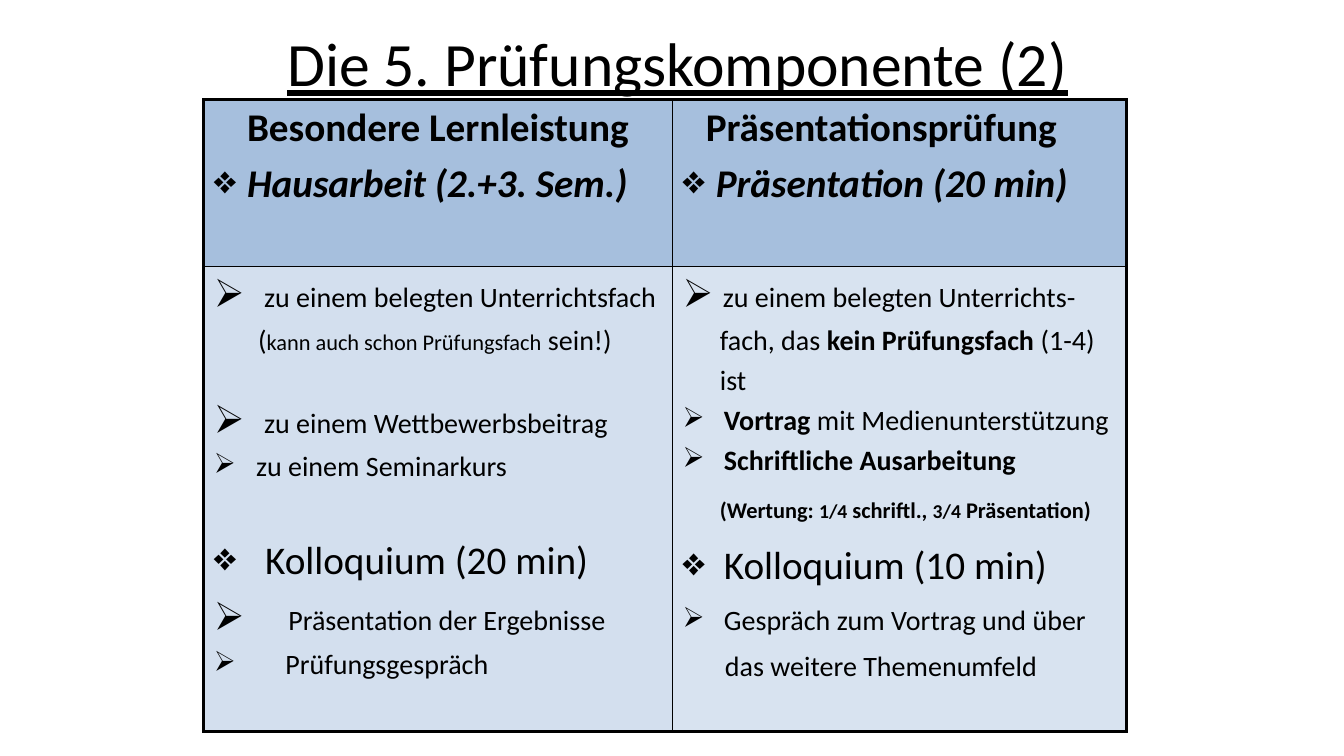
from lxml.etree import SubElement
from pptx import Presentation
from pptx.dml.color import RGBColor
from pptx.enum.text import MSO_ANCHOR as Anchor, PP_ALIGN as Align
from pptx.oxml.ns import qn
from pptx.util import Pt

PX = 9144  # 100 px per inch
FONT = "Calibri"
COLORS = {"ink": "000000", "header": "4F81BD", "left": "A9C1DF", "right": "B3C9E3"}
LINE_HEIGHTS = {44: 54, 28: 34, 20: 24, 16: 20}
OUTER, INNER = 2.25, 1
BOLD = {"bold": True}
HEADING = {"size": 28, "bold": True}
SUBHEADING = {"size": 28, "bold": True, "italic": True}
LARGE = {"size": 28}
SMALL = {"size": 16}
SMALL_BOLD = {"size": 16, "bold": True}
FRACTION = {"size": 14, "bold": True}

# Each line: bullet, bullet size in percent, text indent in px, space before in pt, runs
LEFT_HEADER = [
    ("", 100, 33, 0, [("Besondere Lernleistung", HEADING)]),
    ("❖", 100, 33, 5.5, [("Hausarbeit (2.+3. Sem.)", SUBHEADING)]),
]
RIGHT_HEADER = [
    ("", 100, 23, 0, [("Präsentationsprüfung", HEADING)]),
    ("❖", 100, 33, 5.5, [("Präsentation (20 min)", SUBHEADING)]),
]
LEFT_BODY = [
    ("➢", 140, 50, 0, [("zu einem belegten Unterrichtsfach", {})]),
    ("", 100, 44, 7, [("(", {}), ("kann auch schon Prüfungsfach", SMALL), (" sein!)", {})]),
    ("➢", 140, 50, 35, [("zu einem Wettbewerbsbeitrag", {})]),
    ("➢", 100, 42, 7, [("zu einem Seminarkurs", {})]),
    ("❖", 100, 51, 38, [("Kolloquium (20 min)", LARGE)]),
    ("➢", 140, 74, 14, [("Präsentation der Ergebnisse", {})]),
    ("➢", 100, 71, 7, [("Prüfungsgespräch", {})]),
]
RIGHT_BODY = [
    ("➢", 140, 40, 0, [("zu einem belegten Unterrichts-", {})]),
    ("", 100, 37, 7, [("fach, das ", {}), ("kein Prüfungsfach", BOLD), (" (1-4)", {})]),
    ("", 100, 37, 4.5, [("ist", {})]),
    ("➢", 100, 41, 4.5, [("Vortrag", BOLD), (" mit Medienunterstützung", {})]),
    ("➢", 100, 41, 4.5, [("Schriftliche Ausarbeitung", BOLD)]),
    ("", 100, 37, 13, [("(Wertung: ", SMALL_BOLD), ("1/4", FRACTION), (" schriftl., ", SMALL_BOLD),
                       ("3/4", FRACTION), (" Präsentation)", SMALL_BOLD)]),
    ("❖", 100, 41, 13, [("Kolloquium (10 min)", LARGE)]),
    ("➢", 100, 41, 10, [("Gespräch zum Vortrag und über", {})]),
    ("", 100, 42, 9, [("das weitere Themenumfeld", {})]),
]


def add_run(paragraph, text, formats):
    run = paragraph.add_run()
    run.text = text
    values = {"name": FONT, "size": 20, "bold": False, "italic": False, **formats}
    values["size"] = Pt(values["size"])
    for name, value in values.items():
        setattr(run.font, name, value)
    run.font.color.rgb = RGBColor.from_string(COLORS["ink"])


def set_bullet(paragraph, bullet, percent, indent):
    properties = paragraph._p.get_or_add_pPr()
    properties.set("marL", str(indent * PX))
    properties.set("indent", str(-indent * PX if bullet else 0))
    if bullet:
        SubElement(properties, qn("a:buSzPct")).set("val", str(percent * 1000))
        SubElement(properties, qn("a:buChar")).set("char", bullet)
    else:
        SubElement(properties, qn("a:buNone"))


def write_lines(text_frame, lines):
    for index, (bullet, percent, indent, before, runs) in enumerate(lines):
        paragraph = text_frame.add_paragraph() if index else text_frame.paragraphs[0]
        largest = max(formats.get("size", 20) for _, formats in runs)
        spacing = {"line_spacing": Pt(LINE_HEIGHTS[largest]), "space_before": Pt(before)}
        for name, value in spacing.items():
            setattr(paragraph, name, value)
        set_bullet(paragraph, bullet, percent, indent)
        for text, formats in runs:
            add_run(paragraph, text, formats)


def set_borders(cell, widths):
    properties = cell._tc.get_or_add_tcPr()
    for side, width in zip("LRTB", widths):
        line = SubElement(properties, qn(f"a:ln{side}"), w=str(Pt(width)))
        fill = SubElement(line, qn("a:solidFill"))
        SubElement(fill, qn("a:srgbClr"), val=COLORS["ink"])


def fill_half_transparent(cell, color):
    cell.fill.solid()
    cell.fill.fore_color.rgb = RGBColor.from_string(color)
    rgb = cell._tc.tcPr.find(f"{qn('a:solidFill')}/{qn('a:srgbClr')}")
    SubElement(rgb, qn("a:alpha")).set("val", "50000")


def add_title(slide, left, top, width, height):
    box = slide.shapes.add_textbox(left * PX, top * PX, width * PX, height * PX)
    frame = box.text_frame
    frame.word_wrap = True
    frame.vertical_anchor = Anchor.MIDDLE
    paragraph = frame.paragraphs[0]
    paragraph.alignment = Align.CENTER
    add_run(paragraph, "Die 5. Prüfungskomponente (2)", {"size": 44, "underline": True})


def add_comparison(slide, left, top, column_widths, row_heights):
    frame = slide.shapes.add_table(2, 2, left * PX, top * PX,
                                   sum(column_widths) * PX, sum(row_heights) * PX)
    table = frame.table
    table.first_row = table.horz_banding = False
    for column, width in zip(table.columns, column_widths):
        column.width = width * PX
    for row, height in zip(table.rows, row_heights):
        row.height = height * PX
    contents = [
        [(LEFT_HEADER, "header"), (RIGHT_HEADER, "header")],
        [(LEFT_BODY, "left"), (RIGHT_BODY, "right")],
    ]
    for row, cells in enumerate(contents):
        for column, (lines, color) in enumerate(cells):
            cell = table.cell(row, column)
            margins = {"margin_left": 10, "margin_right": 10,
                       "margin_top": 15 if row else 5, "margin_bottom": 5}
            for name, value in margins.items():
                setattr(cell, name, value * PX)
            write_lines(cell.text_frame, lines)
            set_borders(cell, (INNER if column else OUTER, OUTER if column else INNER,
                               INNER if row else OUTER, OUTER if row else INNER))
            fill_half_transparent(cell, COLORS[color])


def main():
    presentation = Presentation()
    presentation.slide_width = 1333 * PX
    presentation.slide_height = 750 * PX
    slide = presentation.slides.add_slide(presentation.slide_layouts[6])
    add_title(slide, 226, 0, 892, 123)
    add_comparison(slide, 202, 99, (465, 450), (165, 462))
    presentation.save("out.pptx")


if __name__ == "__main__":
    main()
